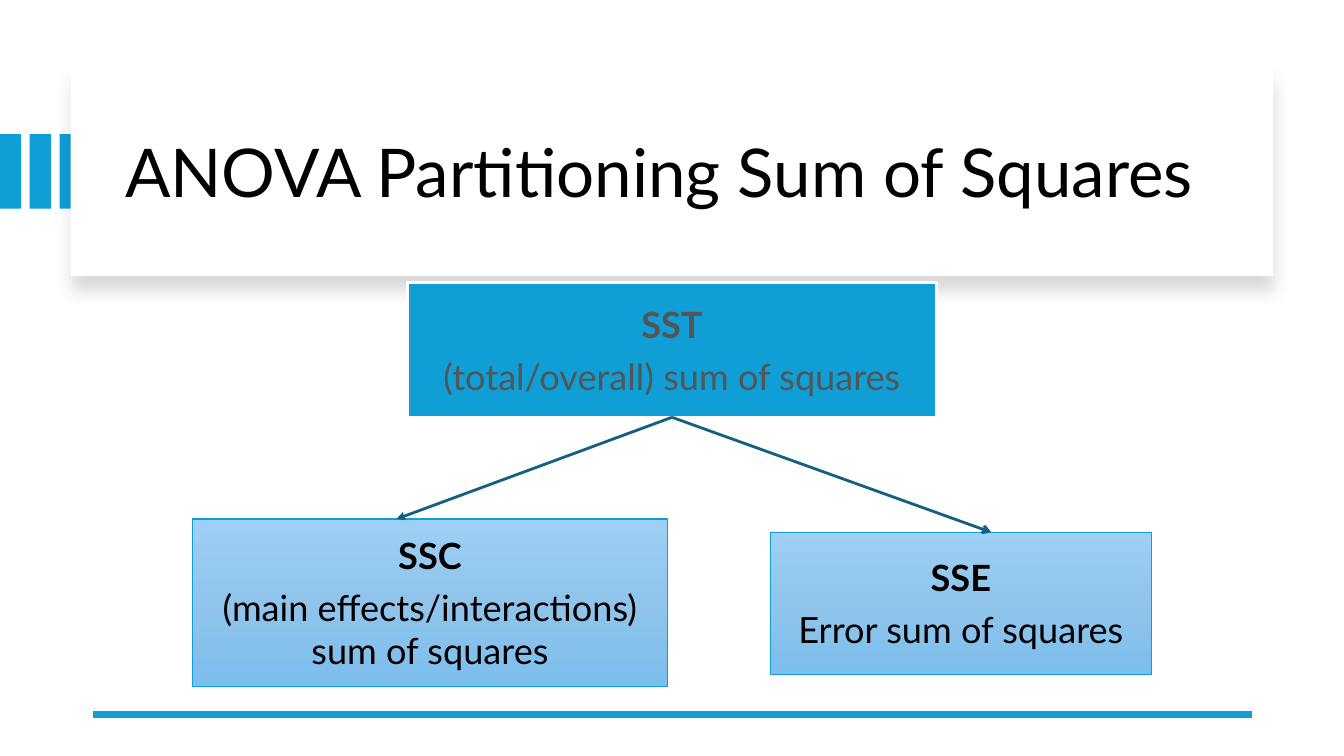
from copy import deepcopy

from lxml import etree
from pptx import Presentation
from pptx.dml.color import RGBColor
from pptx.enum.shapes import MSO_CONNECTOR, MSO_SHAPE
from pptx.enum.text import MSO_ANCHOR, MSO_AUTO_SIZE, PP_ALIGN
from pptx.oxml import parse_xml
from pptx.oxml.ns import nsdecls, qn
from pptx.util import Inches, Pt

RECTANGLE = MSO_SHAPE.RECTANGLE
STRAIGHT = MSO_CONNECTOR.STRAIGHT
MIDDLE = MSO_ANCHOR.MIDDLE
LEFT, CENTER = PP_ALIGN.LEFT, PP_ALIGN.CENTER
BOTTOM_SIDE = 2

COLORS = {
    "accent": "0F9ED5",
    "arrow": "156082",
    "white": "FFFFFF",
    "black": "000000",
    "gray": "555555",
}
BOX_GRADIENT = [(0, "9ECFF5"), (0.5, "90C4EB"), (1, "7CBEED")]


def rgb(name):
    return RGBColor.from_string(COLORS[name])


def write(paragraph, text, size=25.8, color="black", bold=False, align=CENTER, after=6):
    paragraph.alignment = align
    paragraph.space_after = Pt(after)
    run = paragraph.add_run()
    run.text = text
    run.font.name = "Lato"
    run.font.size = Pt(size)
    run.font.bold = bold
    run.font.color.rgb = rgb(color)


prs = Presentation()
prs.slide_width, prs.slide_height = Inches(13.33), Inches(7.5)
slide = prs.slides.add_slide(prs.slide_layouts[5])
shapes = slide.shapes

# Accent bars and the title panel with its soft shadow
panels = [(i * 0.295, 1.33, 0.21, 0.74, "accent") for i in range(3)]
panels.append((0.7, 0.67, 11.93, 2.07, "white"))
for left, top, width, height, color in panels:
    panel = shapes.add_shape(RECTANGLE, Inches(left), Inches(top), Inches(width), Inches(height))
    panel.shadow.inherit = False
    panel.fill.solid()
    panel.fill.fore_color.rgb = rgb(color)
    panel.line.fill.background()
panel_effects = panel._element.spPr.find(qn("a:effectLst"))
panel_effects.append(parse_xml(
    f'<a:outerShdw {nsdecls("a")} blurRad="{Pt(11)}" dist="{Pt(10)}" dir="5400000" '
    'algn="t" rotWithShape="0"><a:srgbClr val="000000"><a:alpha val="15000"/>'
    '</a:srgbClr></a:outerShdw>'))

# Title, brought in front of its panel
title = shapes.title
title.left, title.top, title.width, title.height = map(Inches, (1.14, 0.89, 11.13, 1.7))
title.text_frame.vertical_anchor = MIDDLE
title.text_frame.word_wrap = True
title.text_frame.auto_size = MSO_AUTO_SIZE.NONE
heading = title.text_frame.paragraphs[0]
heading.line_spacing = 0.9
write(heading, "ANOVA Partitioning Sum of Squares", size=48, align=LEFT, after=0)
shapes._spTree.append(title._element)

# Sums of squares: the total and its two parts
sums = [
    ("SST", "(total/overall) sum of squares", 4.04, 2.8, 5.25, 1.34),
    ("SSC", "(main effects/interactions) sum of squares", 1.91, 5.15, 4.71, 1.66),
    ("SSE", "Error sum of squares", 7.64, 5.28, 3.78, 1.41),
]
boxes = {}
for symbol, meaning, left, top, width, height in sums:
    box = shapes.add_shape(RECTANGLE, Inches(left), Inches(top), Inches(width), Inches(height))
    boxes[symbol] = box
    box.shadow.inherit = False
    is_total = symbol == "SST"
    if is_total:
        box.fill.solid()
        box.fill.fore_color.rgb = rgb("accent")
    else:
        box.fill.gradient()
        box.fill.gradient_angle = 270
        first_stop = box._element.spPr.find(".//" + qn("a:gs"))
        first_stop.addnext(deepcopy(first_stop))
        for stop, (position, shade) in zip(box.fill.gradient_stops, BOX_GRADIENT):
            stop.position = position
            stop.color.rgb = RGBColor.from_string(shade)
    box.line.color.rgb = rgb("white" if is_total else "accent")
    box.line.width = Pt(2 if is_total else 1)
    frame = box.text_frame
    frame.word_wrap = True
    frame.vertical_anchor = MIDDLE
    text_color = "gray" if is_total else "black"
    write(frame.paragraphs[0], symbol, color=text_color, bold=True)
    write(frame.add_paragraph(), meaning, color=text_color)

# Footer rule and the arrows from the total to its parts
lines = [
    (12.42, 7.09, 0.92, 7.09, "accent", 4.5, None),
    (6.66, 4.14, 3.93, 5.15, "arrow", 2, "triangle"),
    (6.66, 4.14, 9.83, 5.28, "arrow", 2, "arrow"),
]
for x1, y1, x2, y2, color, weight, head in lines:
    line = shapes.add_connector(STRAIGHT, Inches(x1), Inches(y1), Inches(x2), Inches(y2))
    line.line.color.rgb = rgb(color)
    line.line.width = Pt(weight)
    if head:
        line.begin_connect(boxes["SST"], BOTTOM_SIDE)
        etree.SubElement(line.line._get_or_add_ln(), qn("a:tailEnd"), type=head)
    etree.SubElement(line._element.spPr, qn("a:effectLst"))

prs.save("out.pptx")
